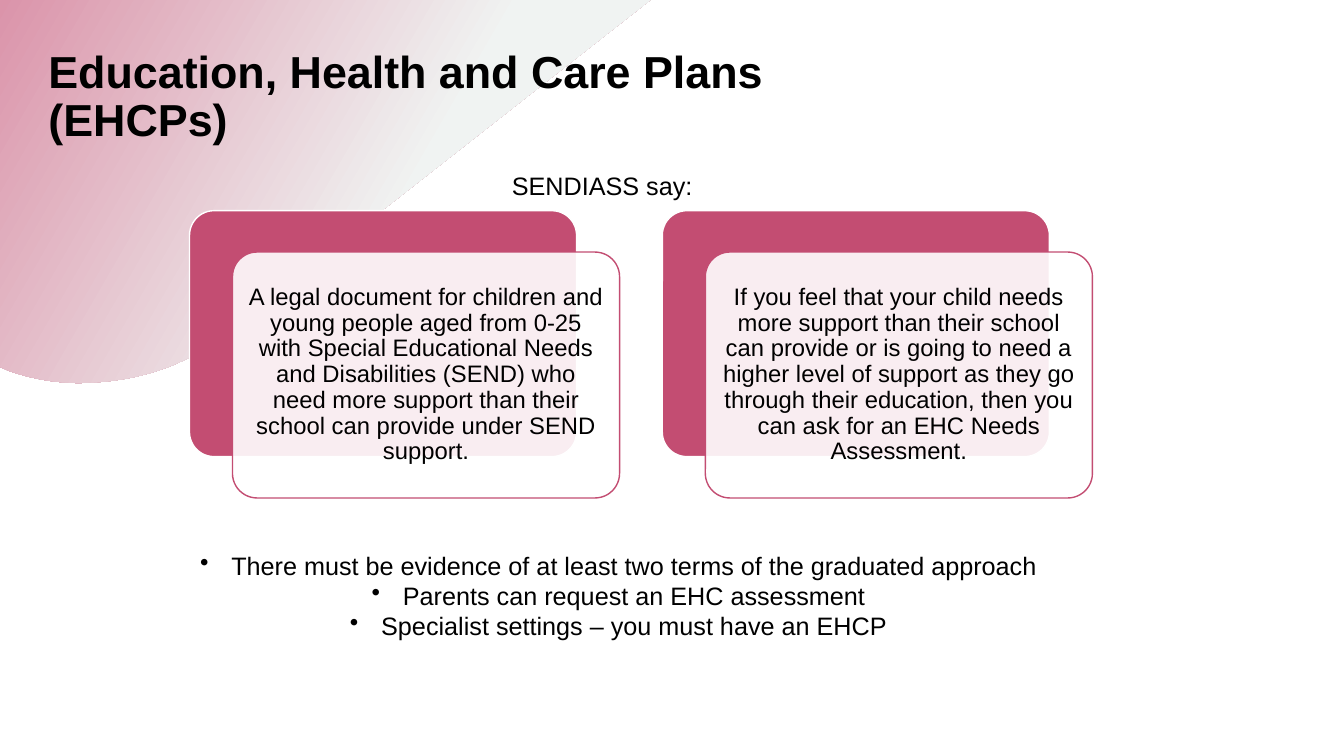
import pptx
import pptx.util
import pptx.dml.color
import pptx.enum.shapes
import pptx.enum.text
import pptx.oxml.ns
import lxml.etree

Align = pptx.enum.text.PP_ALIGN
Anchor = pptx.enum.text.MSO_ANCHOR
Preset = pptx.enum.shapes.MSO_SHAPE


def color(code):
    """Turn a hex string into a colour."""
    return pptx.dml.color.RGBColor.from_string(code)


def curve(a, b, c, d, count=24):
    """List points along a cubic curve, after its start."""
    steps = [i / count for i in range(1, count + 1)]
    return [tuple((1 - t) ** 3 * p + 3 * t * (1 - t) ** 2 * q
                  + 3 * t * t * (1 - t) * r + t ** 3 * s
                  for p, q, r, s in zip(a, b, c, d)) for t in steps]


class Page:
    """Hold the style and the slide; lengths are percent of its size."""
    font, ink, rose, white = "Arial", "000000", "C34D72", "FFFFFF"

    def __init__(self, deck):
        """Add a title-only slide to the deck."""
        self.wide, self.high = deck.slide_width, deck.slide_height
        self.slide = deck.slides.add_slide(deck.slide_layouts[5])
        self.shapes = self.slide.shapes

    def spot(self, x, y):
        """Turn a pair of shares into slide units."""
        return round(x * self.wide / 100), round(y * self.high / 100)

    def area(self, x, y, w, h):
        """Turn a box of shares into slide units."""
        return self.spot(x, y) + self.spot(w, h)

    def letter(self, shape, text, size, align=Align.LEFT, anchor=Anchor.TOP,
               bold=False, space=None):
        """Fill a shape with styled text."""
        frame = shape.text_frame
        frame.text = text
        frame.word_wrap = True
        frame.auto_size = pptx.enum.text.MSO_AUTO_SIZE.NONE
        frame.vertical_anchor = anchor
        for para in frame.paragraphs:
            para.alignment = align
            para.line_spacing = space
            for run in para.runs:
                run.font.name = self.font
                run.font.size = pptx.util.Pt(size)
                run.font.bold = bold
                run.font.color.rgb = color(self.ink)
        return frame

    def title(self, text, *box):
        """Place and fill the title."""
        head = self.shapes.title
        head.left, head.top, head.width, head.height = self.area(*box)
        self.letter(head, text, 32, anchor=Anchor.MIDDLE, bold=True, space=0.9)

    def label(self, text, *box, align=Align.LEFT):
        """Add a text box."""
        shape = self.shapes.add_textbox(*self.area(*box))
        return self.letter(shape, text, 18, align)

    def points(self, items, *box):
        """Add a centred bulleted list."""
        frame = self.label("\n".join(items), *box, align=Align.CENTER)
        dent = pptx.util.Inches(0.31)
        for para in frame.paragraphs:
            props = para._p.get_or_add_pPr()
            props.set("marL", str(dent))
            props.set("indent", str(-dent))
            mark = lxml.etree.SubElement(props, pptx.oxml.ns.qn("a:buChar"))
            mark.set("char", "•")

    def panel(self, fill, line, *box):
        """Add a rounded panel."""
        shape = self.shapes.add_shape(Preset.ROUNDED_RECTANGLE, *self.area(*box))
        shape.adjustments[0] = 0.1
        shape.shadow.inherit = False
        shape.fill.solid()
        shape.fill.fore_color.rgb = color(fill)
        shape.line.color.rgb = color(line)
        shape.line.width = pptx.util.Pt(1)
        return shape

    def card(self, text, x, y, w, h):
        """Add a solid panel with a clear text panel over it."""
        self.panel(self.rose, self.white, x, y, w, h)
        front = self.panel(self.white, self.rose, x + 3.2, y + 5.47, w, h)
        tint = front.element.spPr.find(".//" + pptx.oxml.ns.qn("a:srgbClr"))
        alpha = lxml.etree.SubElement(tint, pptx.oxml.ns.qn("a:alpha"))
        alpha.set("val", "90000")
        frame = self.letter(front, text, 17, Align.CENTER, Anchor.MIDDLE,
                            space=0.9)
        pad = pptx.util.Inches(0.07)
        frame.margin_left = frame.margin_right = pad
        frame.margin_top = frame.margin_bottom = pad

    def petal(self, dots, stops, angle):
        """Add a shaded outline behind the title."""
        first, *rest = [self.spot(*dot) for dot in dots]
        maker = self.shapes.build_freeform(*first)
        maker.add_line_segments(rest, close=True)
        shape = maker.convert_to_shape()
        shape.shadow.inherit = False
        shape.line.fill.background()
        shape.fill.gradient()
        shape.fill.gradient_angle = angle
        for stop, (place, tone) in zip(shape.fill.gradient_stops, stops):
            stop.position = place
            stop.color.rgb = color(tone)
        self.shapes.title.element.addprevious(shape.element)


def main():
    """Build and save the slide."""
    deck = pptx.Presentation()
    deck.slide_width = pptx.util.Inches(13.33)
    deck.slide_height = pptx.util.Inches(7.5)
    page = Page(deck)
    base, side = (5.93, 50.67), (15.9, 45.33)
    dots = [(0, 48.53), (0, 0), (48.39, 0), (16.28, 44.8), side]
    dots += curve(side, (13.2, 48.67), (10.05, 50.53), base)
    dots += curve(base, (4.2, 50.67), (2.4, 50.13), (0.68, 49.07))
    page.petal(dots, [(0, "DB94AA"), (0.6, "F0F3F2")], 330)
    page.title("Education, Health and Care Plans (EHCPs)",
               2.85, 5.2, 63.54, 15.47)
    cards = [
        "A legal document for children and young people aged from 0-25 with "
        "Special Educational Needs and Disabilities (SEND) who need more "
        "support than their school can provide under SEND support.",
        "If you feel that your child needs more support than their school can "
        "provide or is going to need a higher level of support as they go "
        "through their education, then you can ask for an EHC Needs "
        "Assessment."]
    for col, text in enumerate(cards):
        page.card(text, 14.1 + 35.18 * col, 27.87, 28.8, 32.53)
    page.label("SENDIASS say:", 37.35, 21.87, 50.25, 5.33)
    page.points(["There must be evidence of at least two terms of the "
                 "graduated approach",
                 "Parents can request an EHC assessment",
                 "Specialist settings – you must have an EHCP"],
                8.25, 72.13, 75.54, 17.47)
    deck.save("out.pptx")


if __name__ == "__main__":
    main()
